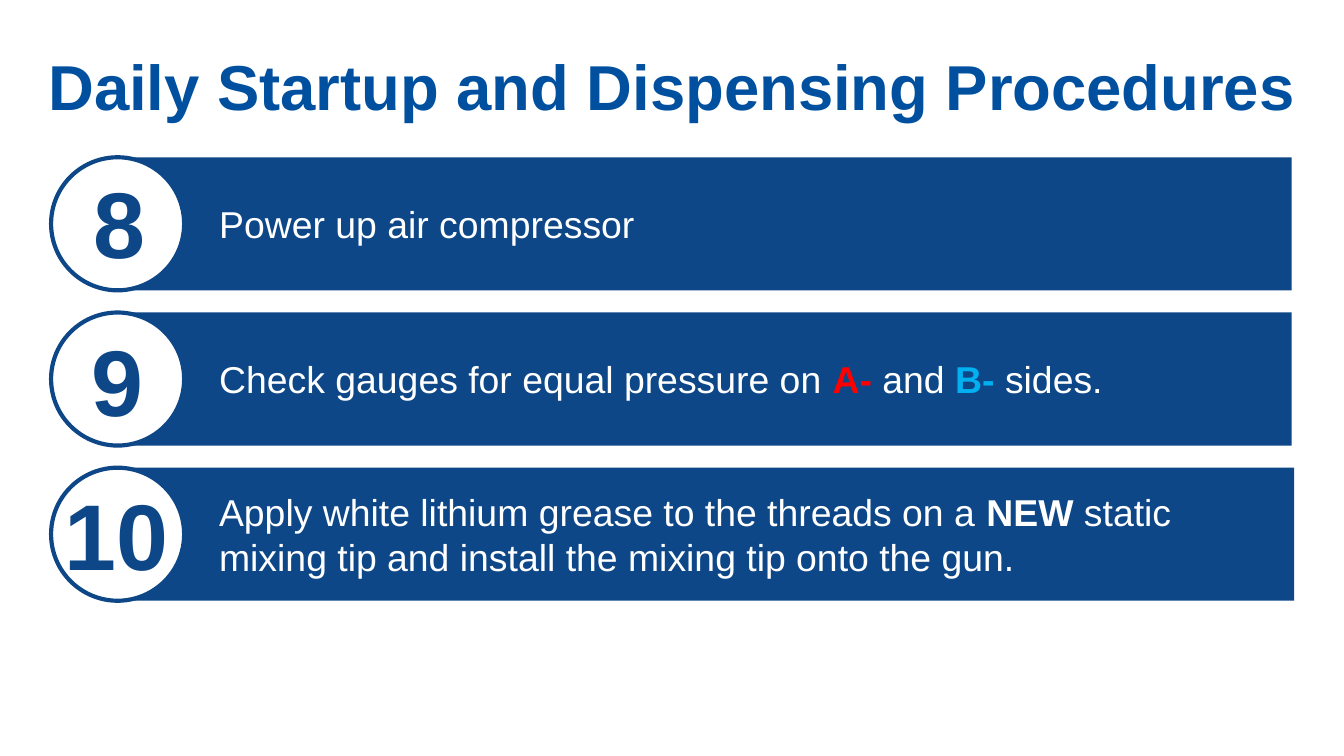
from pptx import Presentation
from pptx.dml.color import RGBColor
from pptx.enum.shapes import MSO_SHAPE
from pptx.enum.text import MSO_ANCHOR, MSO_AUTO_SIZE, PP_ALIGN
from pptx.util import Inches, Pt

RECTANGLE, OVAL = MSO_SHAPE.RECTANGLE, MSO_SHAPE.OVAL
TOP, MIDDLE = MSO_ANCHOR.TOP, MSO_ANCHOR.MIDDLE
LEFT, CENTER = PP_ALIGN.LEFT, PP_ALIGN.CENTER
NO_AUTOFIT = MSO_AUTO_SIZE.NONE
TITLE_ONLY = 5

CELL = 0.1  # inches per grid column and row
COLUMNS, ROWS = 100, 56.25
NAVY, BLUE, WHITE = "0D4787", "00509F", "FFFFFF"
RED, SKY = "FF0000", "00B0F0"

FIRST_ROW, ROW_STEP = 11.7, 11.55
BAR_LEFT, CIRCLE_LEFT, SIZE = 7.9, 3.8, 9.9
# Number, its left and its drop below the bar's top, bar width, spans
STEPS = [
    ("8", 3.9, 0.1, 88.2, [("Power up air compressor", WHITE, False)]),
    ("9", 3.8, 0.3, 88.2, [
        ("Check gauges for equal pressure on ", WHITE, False),
        ("A-", RED, True),
        (" and ", WHITE, False),
        ("B-", SKY, True),
        (" sides.", WHITE, False),
    ]),
    ("10", 3.7, 0.2, 88.4, [
        ("Apply white lithium grease to the threads on a ", WHITE, False),
        ("NEW", WHITE, True),
        (" static mixing tip and install the mixing tip onto the gun.", WHITE, False),
    ]),
]


def color(hex_text):
    return RGBColor.from_string(hex_text)


def grid(cells):
    return Inches(round(cells * CELL, 4))


def write(box, spans, size, align=LEFT, anchor=MIDDLE, insets=(1, 0.5, 1, 0.5), indent=0):
    """Fill a box with one paragraph of (text, colour, bold) spans."""
    frame = box.text_frame
    frame.word_wrap = True
    frame.auto_size = NO_AUTOFIT
    frame.vertical_anchor = anchor
    (frame.margin_left, frame.margin_top,
     frame.margin_right, frame.margin_bottom) = map(grid, insets)
    para = frame.paragraphs[0]
    para.alignment = align
    if indent:
        properties = para._p.get_or_add_pPr()
        properties.set("marL", str(grid(indent)))
        properties.set("indent", "0")
    for text, hex_text, bold in spans:
        span = para.add_run()
        span.text = text
        span.font.name = "Arial"
        span.font.size = Pt(size)
        span.font.bold = bold
        span.font.color.rgb = color(hex_text)


class ProcedureSlide:
    def __init__(self, deck):
        self.page = deck.slides.add_slide(deck.slide_layouts[TITLE_ONLY])

    def title(self, text):
        box = self.page.shapes.title
        box.left, box.top, box.width, box.height = map(grid, (0, 1.6, COLUMNS, 9.4))
        write(box, [(text, BLUE, True)], 34, align=CENTER)

    def shape(self, kind, left, top, width, fill, line=None):
        box = self.page.shapes.add_shape(kind, *map(grid, (left, top, width, SIZE)))
        box.shadow.inherit = False
        box.fill.solid()
        box.fill.fore_color.rgb = color(fill)
        if line:
            box.line.color.rgb = color(line)
            box.line.width = Pt(2.25)
        else:
            box.line.fill.background()
        return box

    def number(self, text, left, top):
        box = self.page.shapes.add_textbox(*map(grid, (left, top, SIZE, 9.4)))
        write(box, [(text, NAVY, True)], 50, align=CENTER, anchor=TOP)

    def step(self, top, number, number_left, drop, width, spans):
        bar = self.shape(RECTANGLE, BAR_LEFT, top, width, NAVY)
        write(bar, spans, 20, insets=(4, 0.5, 2, 0.5), indent=4.4)
        self.shape(OVAL, CIRCLE_LEFT, top, SIZE, WHITE, line=NAVY)
        self.number(number, number_left, top + drop)


def main():
    deck = Presentation()
    deck.slide_width, deck.slide_height = grid(COLUMNS), grid(ROWS)
    slide = ProcedureSlide(deck)
    slide.title("Daily Startup and Dispensing Procedures")
    for index, step in enumerate(STEPS):
        slide.step(FIRST_ROW + index * ROW_STEP, *step)
    deck.save("out.pptx")


if __name__ == "__main__":
    main()
